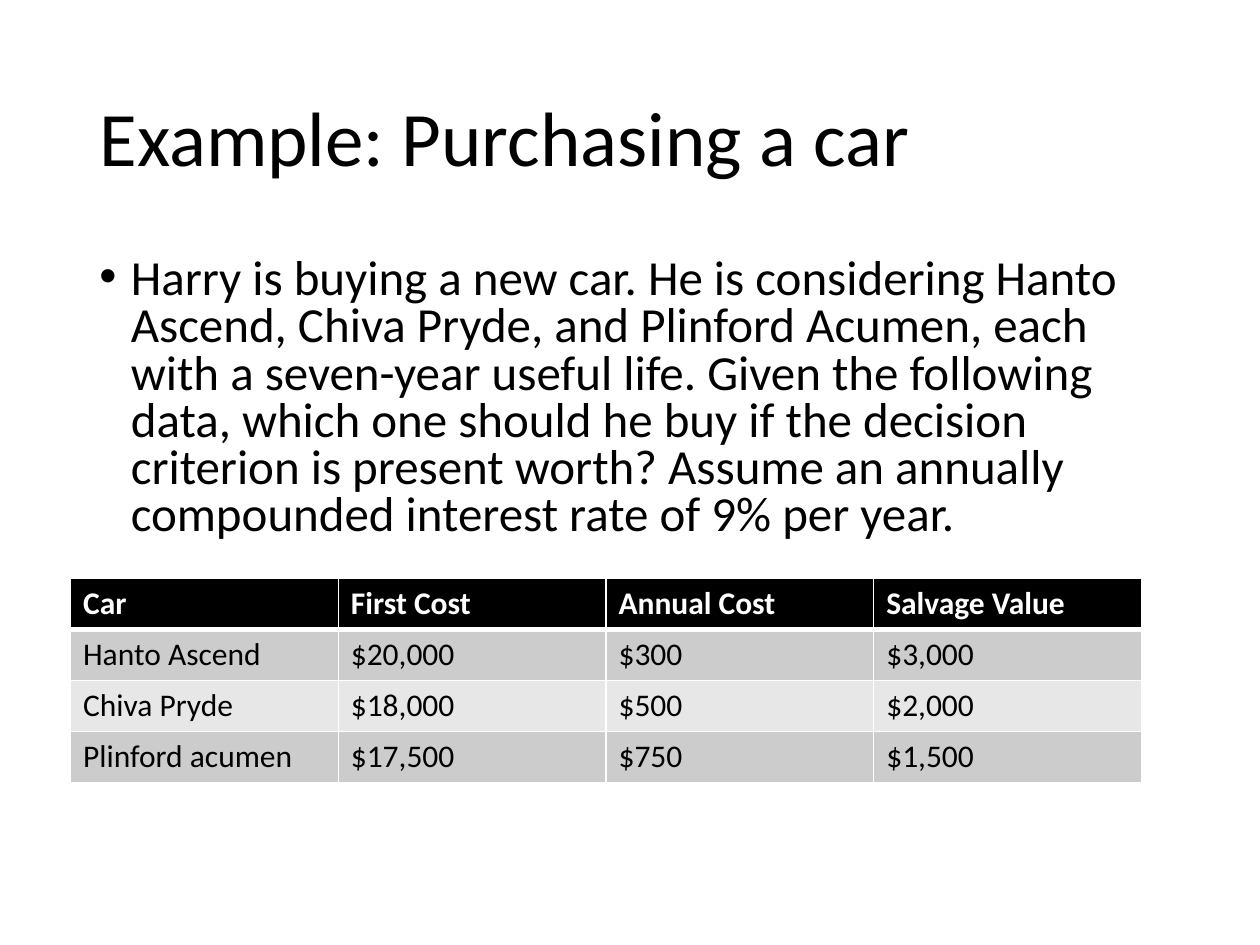
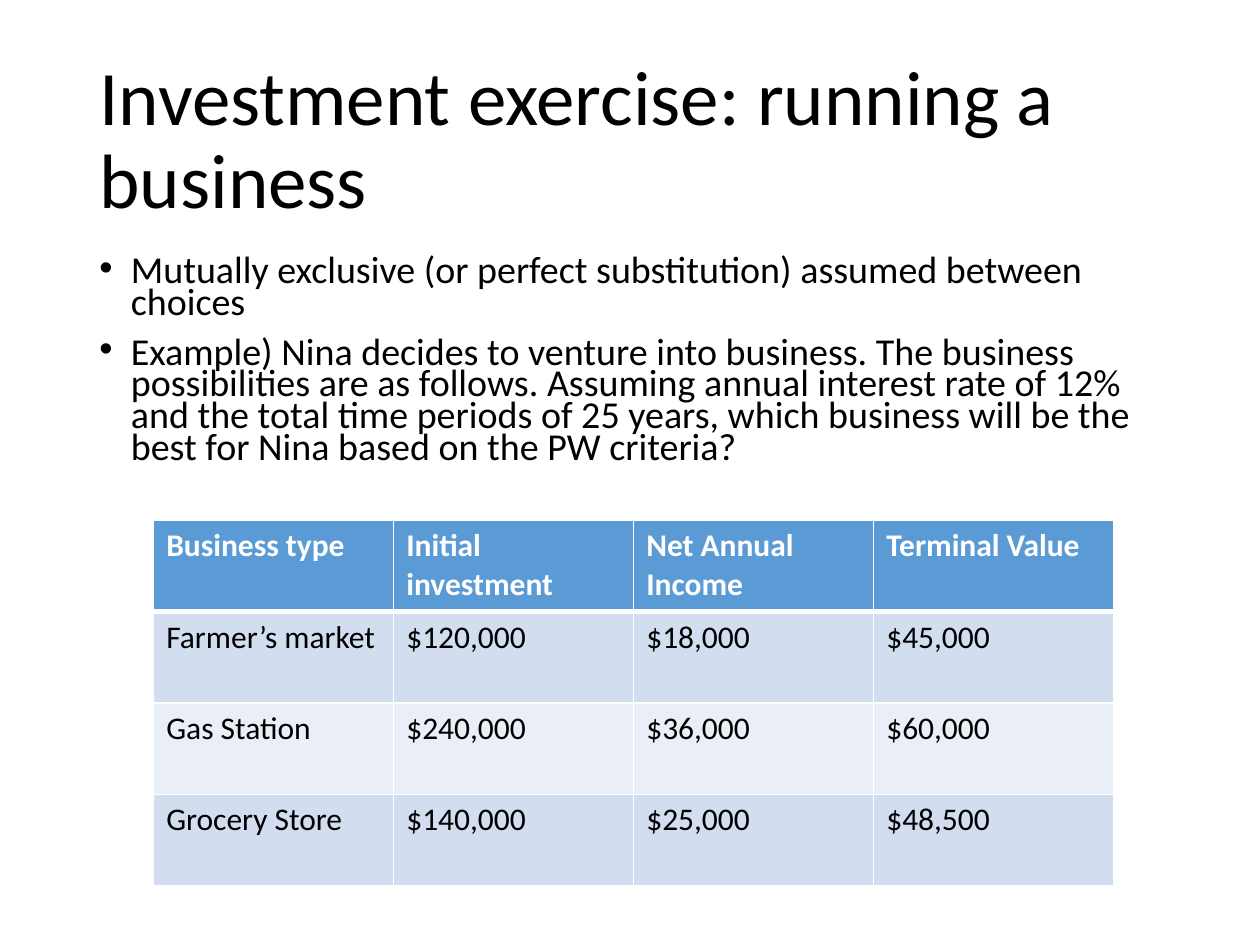
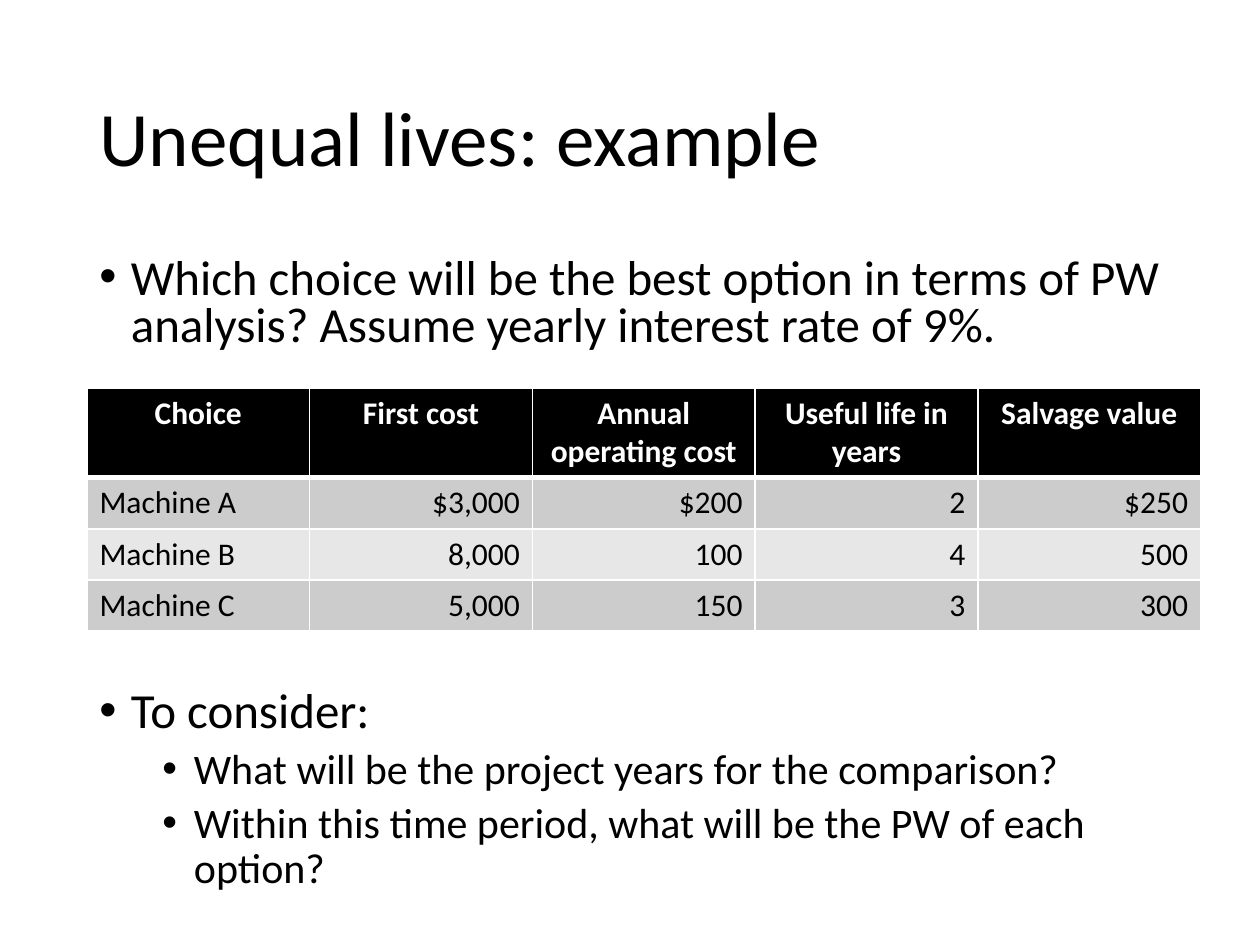
from dataclasses import dataclass

from lxml import etree
from pptx import Presentation
from pptx.dml.color import RGBColor
from pptx.enum.text import MSO_ANCHOR, MSO_AUTO_SIZE, PP_ALIGN
from pptx.oxml.ns import qn
from pptx.util import Pt

LEFT, CENTER, RIGHT = PP_ALIGN.LEFT, PP_ALIGN.CENTER, PP_ALIGN.RIGHT
MIDDLE, TOP = MSO_ANCHOR.MIDDLE, MSO_ANCHOR.TOP
NO_FIT = MSO_AUTO_SIZE.NONE
TITLE_ONLY = 5
EMU_PER_PX = 9144  # 100 px to the inch


@dataclass(frozen=True)
class Theme:
    font: str = "Calibri"
    text: str = "000000"
    white: str = "FFFFFF"
    black_table: tuple = ("000000", "CCCCCC", "E7E7E7")  # header, odd, even
    blue_table: tuple = ("5B9BD5", "D2DEEF", "EAEFF7")
    title_size: float = 44
    body_size: float = 28
    sub_size: float = 24
    small_size: float = 21.7
    cell_size: float = 18
    rule: float = 1
    header_rule: float = 3


THEME = Theme()
SLIDE_SIZE = (1000, 750)
TITLE_BOX = (69, 40, 862, 145)
BODY_LEFT, BODY_TOP, BODY_WIDTH = 69, 200, 862
INDENT, LEVEL_STEP = 25, 50


def px(n):
    return round(n * EMU_PER_PX)


def set_all(obj, values):
    for name, value in values.items():
        setattr(obj, name, value)


def write(p, text, size, color=THEME.text, bold=False):
    r = p.add_run()
    r.text = text
    set_all(r.font, {"name": THEME.font, "size": Pt(size), "bold": bold})
    r.font.color.rgb = RGBColor.from_string(color)


def place(sp, box):
    set_all(sp, dict(zip(("left", "top", "width", "height"), map(px, box))))


def add_title(s, text):
    sp = s.shapes.title
    place(sp, TITLE_BOX)
    tf = sp.text_frame
    set_all(tf, {"word_wrap": True, "auto_size": NO_FIT, "vertical_anchor": MIDDLE})
    p = tf.paragraphs[0]
    set_all(p, {"alignment": LEFT, "line_spacing": 0.9})
    write(p, text, THEME.title_size)


def add_bullets(s, box, items, line_spacing):
    """Items are (level, text, size)."""
    tf = s.shapes.add_textbox(*map(px, box)).text_frame
    set_all(tf, {"word_wrap": True, "auto_size": NO_FIT, "vertical_anchor": TOP})
    for i, (level, text, size) in enumerate(items):
        p = tf.add_paragraph() if i else tf.paragraphs[0]
        set_all(p, {"level": level, "alignment": LEFT, "line_spacing": line_spacing,
                    "space_before": Pt(5 if level else 10)})
        pPr = p._p.get_or_add_pPr()
        pPr.set("marL", str(px(INDENT + level * LEVEL_STEP)))
        pPr.set("indent", str(-px(INDENT)))
        etree.SubElement(pPr, qn("a:buFont"), typeface="Arial")
        etree.SubElement(pPr, qn("a:buChar"), char="•")
        write(p, text, size)


def add_borders(cell, top, bottom):
    tcPr = cell._tc.get_or_add_tcPr()
    widths = {"lnL": THEME.rule, "lnR": THEME.rule, "lnT": top, "lnB": bottom}
    for tag, width in widths.items():
        ln = etree.SubElement(tcPr, qn(f"a:{tag}"), w=str(Pt(width)))
        fill = etree.SubElement(ln, qn("a:solidFill"))
        etree.SubElement(fill, qn("a:srgbClr"), val=THEME.white)


def add_data_table(s, box, rows, colors, header_height=None, header_align=LEFT,
                   value_align=LEFT):
    """Even columns; rows share the height that the header leaves."""
    left, top, width, height = map(px, box)
    table = s.shapes.add_table(len(rows), len(rows[0]), left, top, width, height).table
    table.horz_banding = False
    for col in table.columns:
        col.width = width // len(rows[0])
    head = px(header_height) if header_height else height // len(rows)
    header_fill, *bands = colors
    for i, row in enumerate(rows):
        table.rows[i].height = (height - head) // (len(rows) - 1) if i else head
        for j, text in enumerate(row):
            cell = table.cell(i, j)
            add_borders(cell, THEME.header_rule if i == 1 else THEME.rule,
                        THEME.rule if i else THEME.header_rule)
            cell.fill.solid()
            fill = bands[(i - 1) % 2] if i else header_fill
            cell.fill.fore_color.rgb = RGBColor.from_string(fill)
            p = cell.text_frame.paragraphs[0]
            p.alignment = header_align if i == 0 else value_align if j else LEFT
            write(p, text, THEME.cell_size, THEME.text if i else THEME.white, i == 0)


def add_slide(prs, title, bullets, body_height, line_spacing, size):
    s = prs.slides.add_slide(prs.slide_layouts[TITLE_ONLY])
    add_title(s, title)
    add_bullets(s, (BODY_LEFT, BODY_TOP, BODY_WIDTH, body_height),
                [(0, text, size) for text in bullets], line_spacing)
    return s


def car_slide(prs):
    s = add_slide(prs, "Example: Purchasing a car", [
        "Harry is buying a new car. He is considering Hanto Ascend, Chiva Pryde, "
        "and Plinford Acumen, each with a seven-year useful life. Given the "
        "following data, which one should he buy if the decision criterion is "
        "present worth? Assume an annually compounded interest rate of 9% per year.",
    ], 249, 0.8, THEME.body_size)
    add_data_table(s, (56, 459, 850, 162), [
        ("Car", "First Cost", "Annual Cost", "Salvage Value"),
        ("Hanto Ascend", "$20,000", "$300", "$3,000"),
        ("Chiva Pryde", "$18,000", "$500", "$2,000"),
        ("Plinford acumen", "$17,500", "$750", "$1,500"),
    ], THEME.black_table)


def business_slide(prs):
    s = add_slide(prs, "Investment exercise: running a business", [
        "Mutually exclusive (or perfect substitution) assumed between choices",
        "Example) Nina decides to venture into business. The business possibilities "
        "are as follows. Assuming annual interest rate of 12% and the total time "
        "periods of 25 years, which business will be the best for Nina based on "
        "the PW criteria?",
    ], 213, 0.7, THEME.small_size)
    add_data_table(s, (122, 413, 762, 290), [
        ("Business type", "Initial investment", "Net Annual Income", "Terminal Value"),
        ("Farmer’s market", "$120,000", "$18,000", "$45,000"),
        ("Gas Station", "$240,000", "$36,000", "$60,000"),
        ("Grocery Store", "$140,000", "$25,000", "$48,500"),
    ], THEME.blue_table)


def machine_slide(prs):
    s = add_slide(prs, "Unequal lives: example", [
        "Which choice will be the best option in terms of PW analysis? "
        "Assume yearly interest rate of 9%.",
    ], 93, 0.8, THEME.body_size)
    add_data_table(s, (69, 308, 884, 192), [
        ("Choice", "First cost", "Annual operating cost", "Useful life in years",
         "Salvage value"),
        ("Machine A", "$3,000", "$200", "2", "$250"),
        ("Machine B", "8,000", "100", "4", "500"),
        ("Machine C", "5,000", "150", "3", "300"),
    ], THEME.black_table, header_height=70, header_align=CENTER, value_align=RIGHT)
    add_bullets(s, (BODY_LEFT, 540, BODY_WIDTH, 210), [
        (0, "To consider:", THEME.body_size),
        (1, "What will be the project years for the comparison?", THEME.sub_size),
        (1, "Within this time period, what will be the PW of each option?",
         THEME.sub_size),
    ], 0.9)


def main():
    prs = Presentation()
    prs.slide_width, prs.slide_height = map(px, SLIDE_SIZE)
    for build in (car_slide, business_slide, machine_slide):
        build(prs)
    prs.save("out.pptx")


if __name__ == "__main__":
    main()
